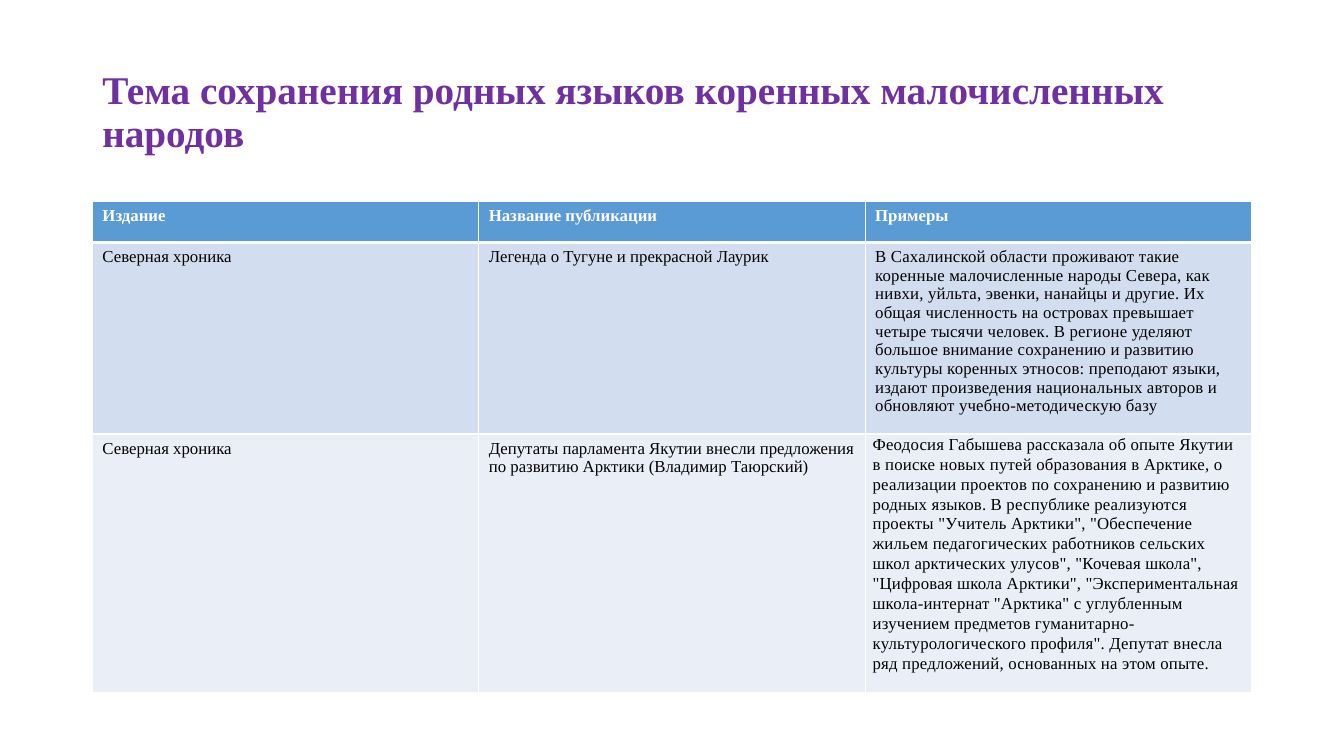
from lxml import etree
from pptx import Presentation, util as u
from pptx.dml.color import RGBColor
from pptx.enum import text
from pptx.oxml import ns

FONT = "Times New Roman"
LEFT, WIDTH = 66, 828
ROW_HEIGHT = 29.2  # minimum; rows grow with their text


def rgb(value):
    return RGBColor.from_string(value)


def add_border(cell, side, points):
    """Draw one white edge of a cell; side is L, R, T or B."""
    line = etree.SubElement(cell._tc.get_or_add_tcPr(), ns.qn(f"a:ln{side}"), w=str(u.Pt(points)))
    fill = etree.SubElement(line, ns.qn("a:solidFill"))
    etree.SubElement(fill, ns.qn("a:srgbClr"), val="FFFFFF")


deck = Presentation()
deck.slide_width, deck.slide_height = u.Pt(960), u.Pt(540)
slide = deck.slides.add_slide(deck.slide_layouts[6])

title = slide.shapes.add_textbox(u.Pt(LEFT), u.Pt(28.75), u.Pt(WIDTH), u.Pt(104.4)).text_frame
title.word_wrap = True
title.vertical_anchor = text.MSO_ANCHOR.MIDDLE
heading = title.paragraphs[0]
heading.text = "Тема сохранения родных языков коренных малочисленных народов"
heading.line_spacing = 0.9
heading.font.name, heading.font.size, heading.font.bold = FONT, u.Pt(28), True
heading.font.color.rgb = rgb("7030A0")

newspaper = "Северная хроника"
publications = [
    ("Издание", "Название публикации", "Примеры"),
    (
        newspaper,
        "Легенда о Тугуне и прекрасной Лаурик",
        "В Сахалинской области проживают такие коренные малочисленные народы Севера, "
        "как нивхи, уйльта, эвенки, нанайцы и другие. Их общая численность на островах "
        "превышает четыре тысячи человек. В регионе уделяют большое внимание сохранению "
        "и развитию культуры коренных этносов: преподают языки, издают произведения "
        "национальных авторов и обновляют учебно-методическую базу",
    ),
    (
        newspaper,
        "Депутаты парламента Якутии внесли предложения по развитию Арктики (Владимир Таюрский)",
        "Феодосия Габышева рассказала об опыте Якутии в поиске новых путей образования "
        "в Арктике, о реализации проектов по сохранению и развитию родных языков. "
        'В республике реализуются проекты "Учитель Арктики", "Обеспечение жильем '
        'педагогических работников сельских школ арктических улусов", "Кочевая школа", '
        '"Цифровая школа Арктики", "Экспериментальная школа-интернат "Арктика" '
        'с углубленным изучением предметов гуманитарно-культурологического профиля". '
        "Депутат внесла ряд предложений, основанных на этом опыте.",
    ),
]
row_fills = ["5B9BD5", "D2DEEF", "EAEFF7"]

table = slide.shapes.add_table(
    len(publications), 3, u.Pt(LEFT), u.Pt(144), u.Pt(WIDTH), u.Pt(ROW_HEIGHT * len(publications))
).table
for column in table.columns:
    column.width = u.Pt(WIDTH / 3)

for r, (fill, entries) in enumerate(zip(row_fills, publications)):
    table.rows[r].height = u.Pt(ROW_HEIGHT)
    header = r == 0
    for c, entry in enumerate(entries):
        cell = table.cell(r, c)
        for side in "LRTB":
            heavy = (header and side == "B") or (r == 1 and side == "T")
            add_border(cell, side, 3 if heavy else 1)
        cell.fill.solid()
        cell.fill.fore_color.rgb = rgb(fill)
        cell.text = entry
        paragraph = cell.text_frame.paragraphs[0]
        paragraph.font.name, paragraph.font.size, paragraph.font.bold = FONT, u.Pt(12), header
        paragraph.font.color.rgb = rgb("FFFFFF" if header else "000000")
        if c == 2 and not header:
            paragraph.runs[0].font._element.set("spc", "13")

last_example = table.cell(2, 2)
last_example.margin_left = last_example.margin_right = u.Pt(5.4)
last_example.margin_top = last_example.margin_bottom = 0
last_paragraph = last_example.text_frame.paragraphs[0]
last_paragraph.line_spacing = 1.07
last_paragraph.space_after = u.Pt(8)

deck.save("out.pptx")
